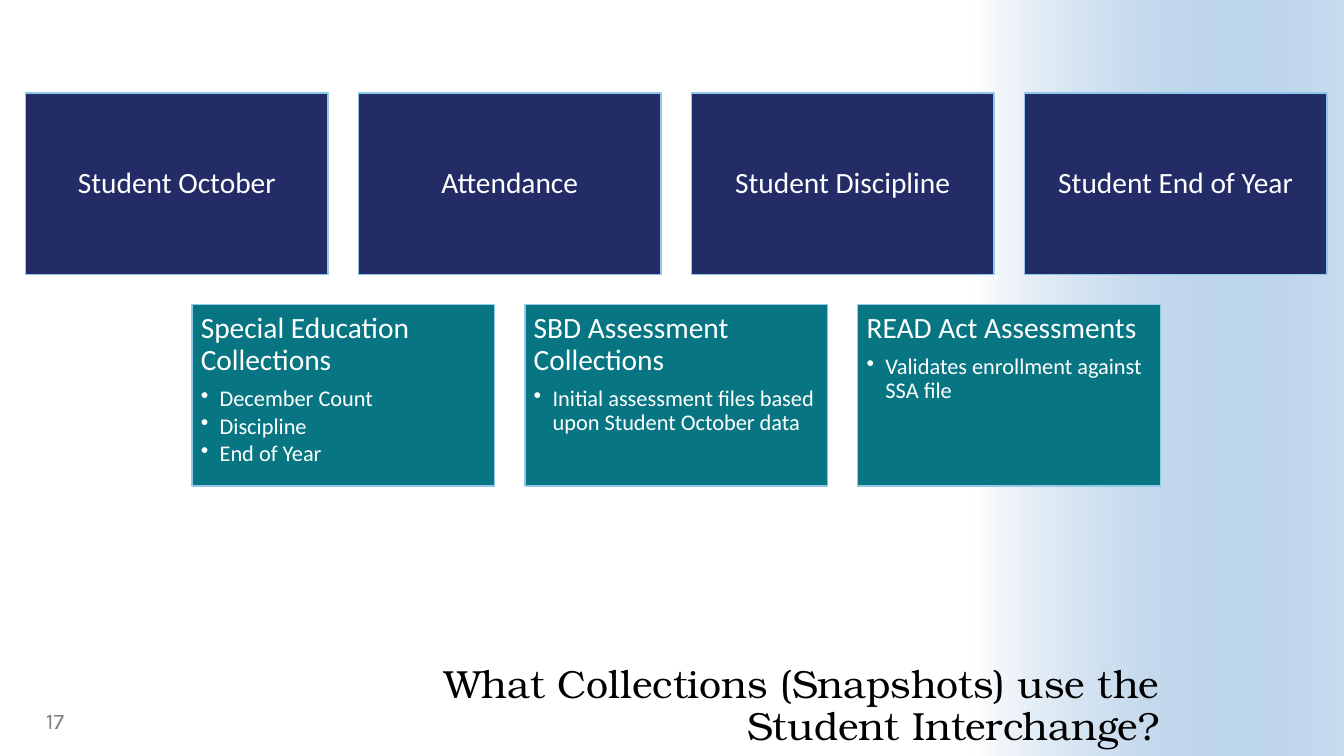
from lxml import etree
from pptx import Presentation
from pptx.dml.color import RGBColor
from pptx.enum.shapes import MSO_SHAPE as Shape
from pptx.enum.text import MSO_ANCHOR as Anchor, PP_ALIGN as Align
from pptx.oxml.ns import qn
from pptx.util import Pt


def color(hex_string):
    return RGBColor.from_string(hex_string)


def style(para, size, font, hex_string):
    para.font.size = Pt(size)
    para.font.name = font
    para.font.color.rgb = color(hex_string)


deck = Presentation()
deck.slide_width, deck.slide_height = Pt(960), Pt(540)
page = deck.slides.add_slide(deck.slide_layouts[6])

band = page.shapes.add_shape(Shape.RECTANGLE, Pt(558.2), Pt(138.2), Pt(540), Pt(263.6))
band.rotation = 270
band.shadow.inherit = False
band.line.fill.background()
band.fill.gradient()
band.fill.gradient_angle = 270
for stop, hex_string in zip(band.fill.gradient_stops, ["FFFFFF", "488BC9"]):
    stop.color.rgb = color(hex_string)
end_color = band._element.spPr.findall(".//" + qn("a:srgbClr"))[-1]
etree.SubElement(end_color, qn("a:alpha"), val="30000")

title = page.shapes.add_textbox(Pt(306.7), Pt(464.4), Pt(521.3), Pt(70.6))
frame = title.text_frame
frame.word_wrap = True
frame.vertical_anchor = Anchor.BOTTOM
frame.margin_left = frame.margin_right = frame.margin_top = frame.margin_bottom = 0
frame.text = "What Collections (Snapshots) use the Student Interchange?"
para = frame.paragraphs[0]
para.alignment = Align.RIGHT
para.line_spacing = 0.9
style(para, 28, "TeX Gyre Bonum", "000000")

rows = [
    (18.2, 66.4, "232C67", Anchor.MIDDLE, Align.CENTER, [
        ("Student October", []),
        ("Attendance", []),
        ("Student Discipline", []),
        ("Student End of Year", []),
    ]),
    (137.1, 217.6, "077682", Anchor.TOP, Align.LEFT, [
        ("Special Education Collections", ["December Count", "Discipline", "End of Year"]),
        ("SBD Assessment Collections", ["Initial assessment files based upon Student October data"]),
        ("READ Act Assessments", ["Validates enrollment against SSA file"]),
    ]),
]
for left, top, fill, anchor, alignment, cards in rows:
    for column, (heading, bullets) in enumerate(cards):
        card = page.shapes.add_shape(
            Shape.RECTANGLE, Pt(left + column * 237.8), Pt(top), Pt(216.2), Pt(129.7))
        card.shadow.inherit = False
        card.fill.solid()
        card.fill.fore_color.rgb = color(fill)
        card.line.color.rgb = color("90C8E7")
        card.line.width = Pt(1)
        frame = card.text_frame
        frame.word_wrap = True
        frame.vertical_anchor = anchor
        frame.margin_left = frame.margin_right = Pt(6.3)
        frame.margin_top = frame.margin_bottom = Pt(6.3)
        frame.text = "\n".join([heading] + bullets)
        for index, para in enumerate(frame.paragraphs):
            para.alignment = alignment
            para.line_spacing = 0.9
            if index:
                para.level = 1
                para.space_after = Pt(2.4)
                properties = para._p.get_or_add_pPr()
                properties.set("marL", str(Pt(13.5)))
                properties.set("indent", str(-Pt(13.5)))
                etree.SubElement(properties, qn("a:buChar"), char="•")
            elif bullets:
                para.space_after = Pt(7.35)
            style(para, 16 if index else 21, "Calibri", "FFFFFF")

number = page.shapes.add_textbox(Pt(25.9), Pt(500.4), Pt(216), Pt(28.8))
frame = number.text_frame
frame.word_wrap = True
frame.vertical_anchor = Anchor.MIDDLE
frame.text = "17"
style(frame.paragraphs[0], 16, "Karla", "808080")

deck.save("out.pptx")
